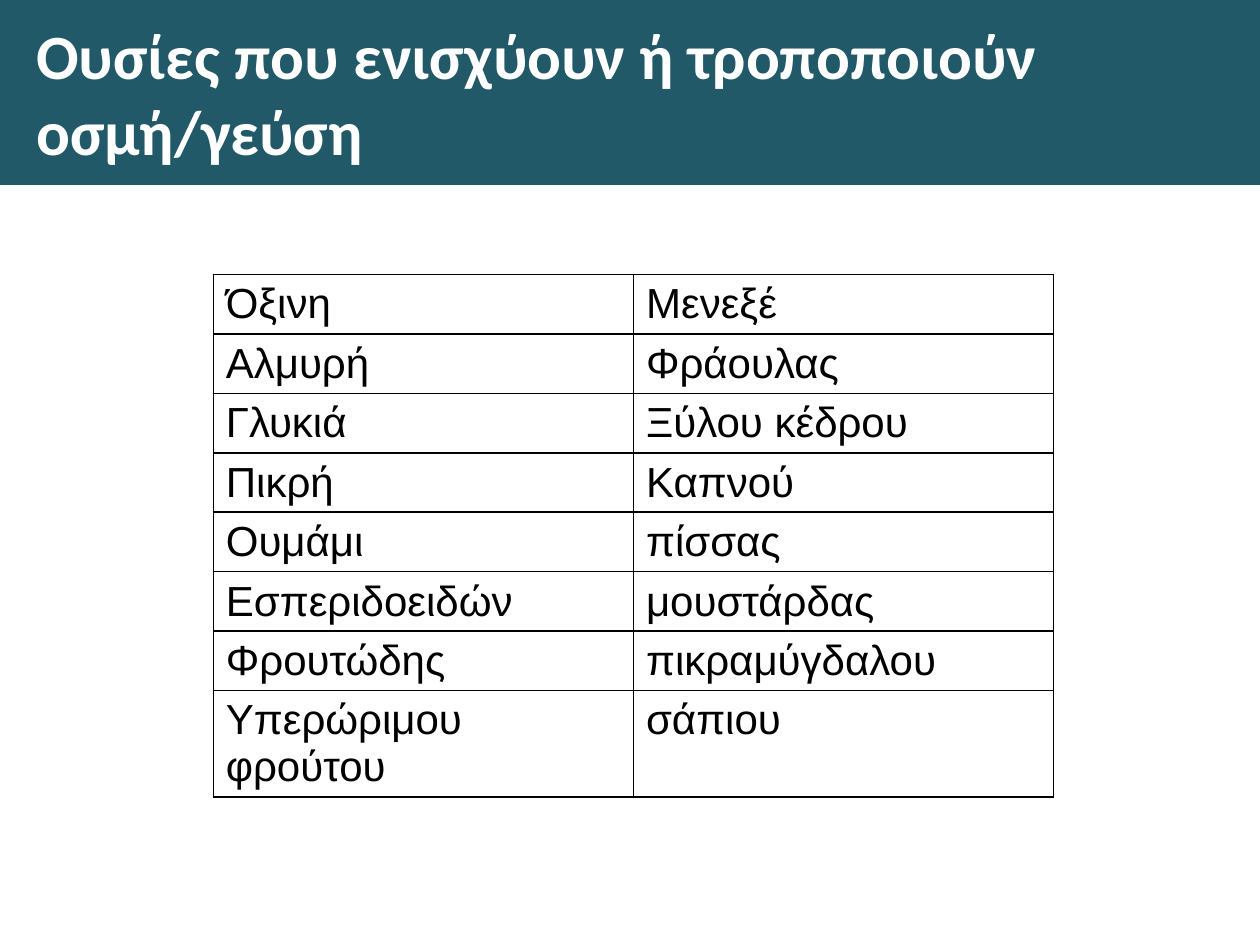
from typing import NamedTuple

from lxml import etree
from pptx import Presentation
from pptx.dml import color
from pptx.enum import text
from pptx.oxml import ns
from pptx.util import Cm, Pt


class Flavour(NamedTuple):
    left: str
    right: str


FLAVOURS = [
    Flavour("Όξινη", "Μενεξέ"),
    Flavour("Αλμυρή", "Φράουλας"),
    Flavour("Γλυκιά", "Ξύλου κέδρου"),
    Flavour("Πικρή", "Καπνού"),
    Flavour("Ουμάμι", "πίσσας"),
    Flavour("Εσπεριδοειδών", "μουστάρδας"),
    Flavour("Φρουτώδης", "πικραμύγδαλου"),
    Flavour("Υπερώριμου φρούτου", "σάπιου"),
]
COLUMN_WIDTH = Cm(8.47)
ROW_HEIGHT = Cm(1.04)


def rgb(value: str) -> color.RGBColor:
    return color.RGBColor.from_string(value)


def write(frame, words: str, *, font: str, size: float, ink: str,
          bold: bool = False, indent: int = 0) -> None:
    para = frame.paragraphs[0]
    para.alignment = text.PP_ALIGN.LEFT
    if indent:
        properties = para._p.get_or_add_pPr()
        properties.set("marL", str(indent))
        properties.set("indent", "0")
    span = para.add_run()
    span.text = words
    span.font.name = font
    span.font.size = Pt(size)
    span.font.bold = bold
    span.font.color.rgb = rgb(ink)


def add_borders(cell, ink: str, width: int) -> None:
    properties = cell._tc.get_or_add_tcPr()
    for position, side in enumerate(("lnL", "lnR", "lnT", "lnB")):
        line = etree.Element(ns.qn(f"a:{side}"), w=str(width))
        fill = etree.SubElement(line, ns.qn("a:solidFill"))
        etree.SubElement(fill, ns.qn("a:srgbClr"), val=ink)
        properties.insert(position, line)


def add_title(page, words: str) -> None:
    box = page.shapes.title
    box.left, box.top, box.width, box.height = Cm(0), Cm(0), Cm(25.4), Cm(3.73)
    box.fill.solid()
    box.fill.fore_color.rgb = rgb("215968")
    frame = box.text_frame
    frame.word_wrap = True
    frame.auto_size = text.MSO_AUTO_SIZE.NONE
    frame.vertical_anchor = text.MSO_ANCHOR.MIDDLE
    write(frame, words, font="Calibri", size=36, ink="FFFFFF", bold=True,
          indent=Cm(0.48))


def add_flavours(page, flavours: list[Flavour]) -> None:
    table = page.shapes.add_table(
        len(flavours), 2, Cm(4.3), Cm(5.53),
        2 * COLUMN_WIDTH, len(flavours) * ROW_HEIGHT).table
    table.first_row = False
    table.horz_banding = False
    for row, flavour in enumerate(flavours):
        for column, words in enumerate(flavour):
            cell = table.cell(row, column)
            cell.fill.background()
            add_borders(cell, "000000", Pt(1))
            write(cell.text_frame, words, font="Arial", size=24, ink="000000")


def main() -> None:
    deck = Presentation()
    deck.slide_width, deck.slide_height = Cm(25.4), Cm(19.05)
    page = deck.slides.add_slide(deck.slide_layouts.get_by_name("Title Only"))
    add_title(page, "Ουσίες που ενισχύουν ή τροποποιούν οσμή/γεύση")
    add_flavours(page, FLAVOURS)
    deck.save("out.pptx")


if __name__ == "__main__":
    main()
